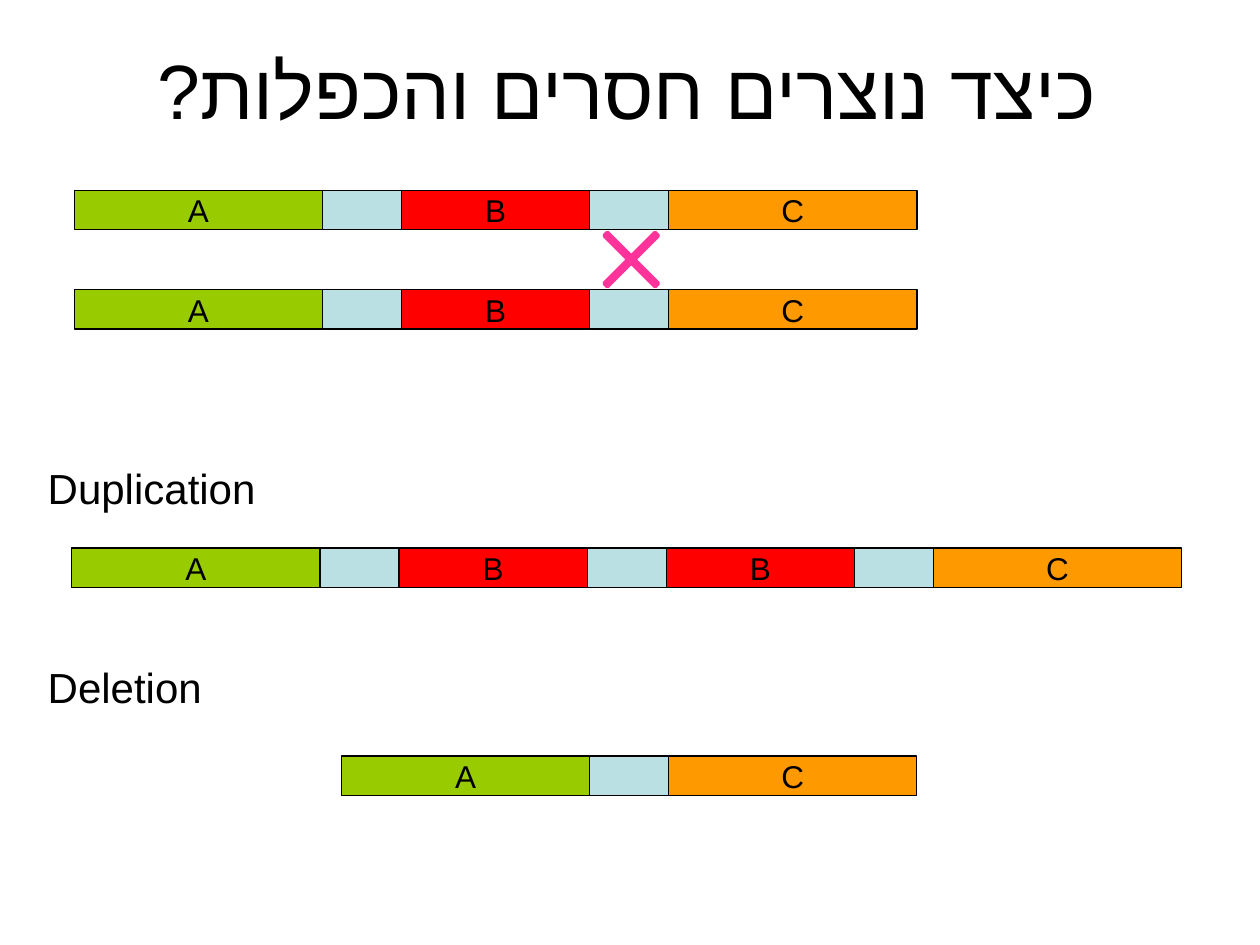
import pptx
import pptx.util
import pptx.dml.color
import pptx.enum.shapes
import pptx.enum.text
import lxml.etree

Pt = pptx.util.Pt
Shape = pptx.enum.shapes.MSO_SHAPE
Align = pptx.enum.text.PP_ALIGN
Anchor = pptx.enum.text.MSO_ANCHOR
Fit = pptx.enum.text.MSO_AUTO_SIZE


def paint(form, fill, edge, width):
    form.shadow.inherit = False
    form.fill.solid()
    form.fill.fore_color.rgb = pptx.dml.color.RGBColor.from_string(fill)
    form.line.color.rgb = pptx.dml.color.RGBColor.from_string(edge)
    form.line.width = Pt(width)


def write(form, text, size, frame, rtl=False):
    for name, value in frame.items():
        setattr(form.text_frame, name, value)
    par = form.text_frame.paragraphs[0]
    run = par.add_run()
    run.text = text
    for name, value in {"name": "Arial", "size": Pt(size)}.items():
        setattr(run.font, name, value)
    run.font.color.rgb = pptx.dml.color.RGBColor.from_string("000000")
    if rtl:
        par.alignment = Align.CENTER
        par._p.get_or_add_pPr().set("rtl", "1")
        script = lxml.etree.SubElement(run._r.rPr, pptx.oxml.ns.qn("a:cs"))
        script.set("typeface", "Arial")


deck = pptx.Presentation()
deck.slide_width, deck.slide_height = Pt(720), Pt(540)
slide = deck.slides.add_slide(deck.slide_layouts[5])

# Title
title = slide.shapes.title
place = {"left": 34.56, "top": 5.76, "width": 648, "height": 90}
for name, value in place.items():
    setattr(title, name, Pt(value))
frame = {"vertical_anchor": Anchor.MIDDLE, "word_wrap": True,
         "auto_size": Fit.NONE}
write(title, "כיצד נוצרים חסרים והכפלות?", 44, frame, True)

# Gene strips: "-" is a spacer whose far end lies under the next gene
genes = {  # colour, drawn width, step to the next part
    "A": ("99CC00", 141.84, 141.84),
    "B": ("FF0000", 107.64, 107.64),
    "C": ("FF9900", 141.84, 141.84),
    "-": ("BBE0E3", 62.64, 45.1),
}
strips = [
    ("A-B-C", 42.48, 108.72),
    ("A-B-C", 42.48, 165.6),
    ("A-B-B-C", 41.04, 313.2),
    ("A-C", 195.12, 432),
]
frame = {"vertical_anchor": Anchor.MIDDLE, "word_wrap": False}
for parts, left, top in strips:
    group = slide.shapes.add_group_shape()
    for part in parts:
        fill, width, step = genes[part]
        box = group.shapes.add_shape(
            Shape.RECTANGLE, Pt(left), Pt(top), Pt(width), Pt(22.5))
        paint(box, fill, "000000", 0.75)
        if part != "-":
            write(box, part, 18, frame, True)
        left += step

# Outcome labels
frame = {"word_wrap": True, "auto_size": Fit.SHAPE_TO_FIT_TEXT}
for text, top, width in [("Duplication", 260.64, 138.24),
                         ("Deletion", 374.4, 107.28)]:
    label = slide.shapes.add_textbox(Pt(20.16), Pt(top), Pt(width), Pt(36))
    write(label, text, 24, frame)
    label.text_frame.paragraphs[0].space_before = Pt(12)

# Crossover mark
cross = slide.shapes.add_shape(
    Shape.MATH_MULTIPLY, Pt(332.64), Pt(120.24), Pt(56.16), Pt(56.16))
cross.adjustments[0] = 0.048
paint(cross, "FF3399", "FF3399", 2)

deck.save("out.pptx")
